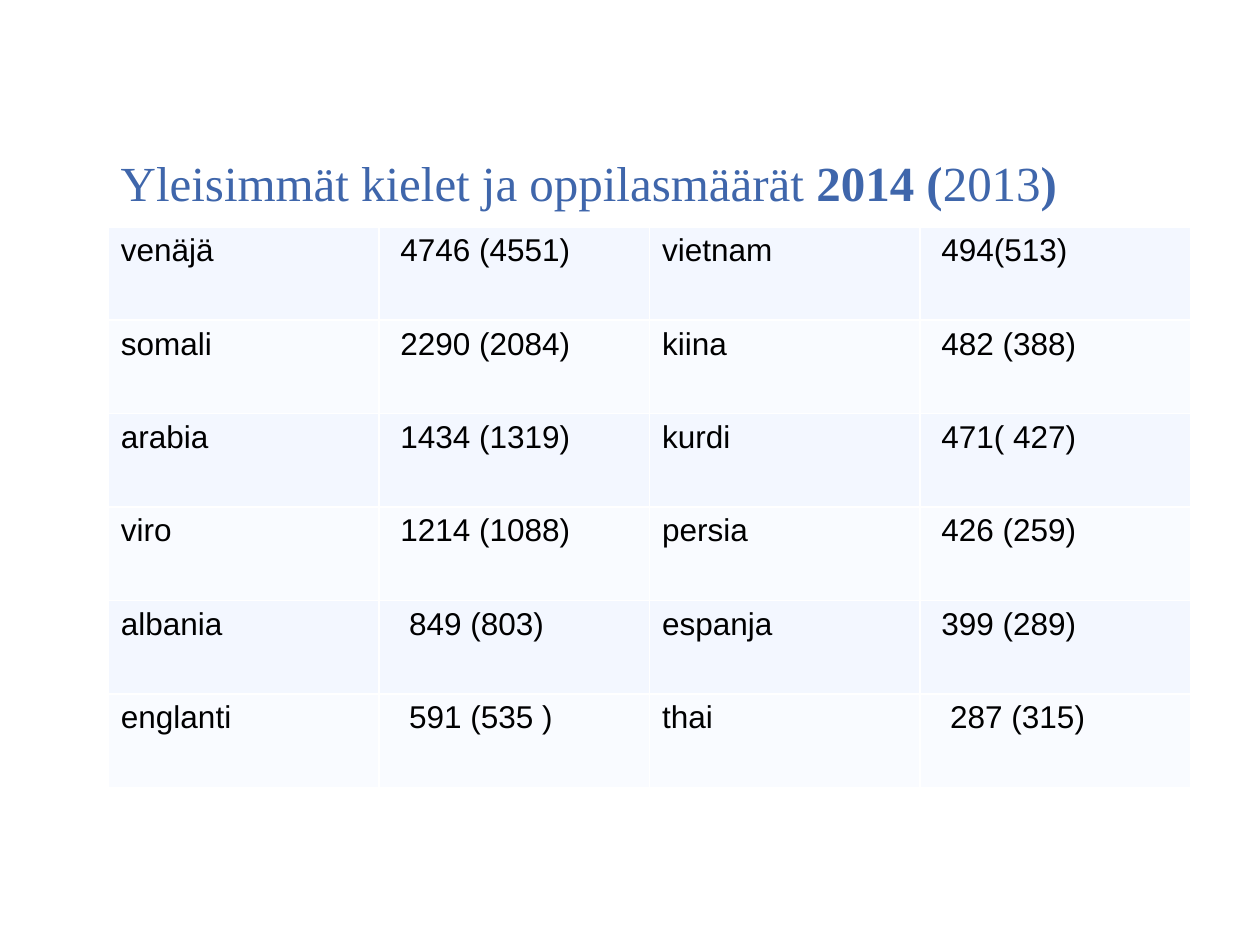
from dataclasses import dataclass

import lxml.etree
import pptx
import pptx.dml.color
import pptx.enum.text
import pptx.oxml.ns
import pptx.util

Inches = pptx.util.Inches
Pt = pptx.util.Pt
Color = pptx.dml.color.RGBColor.from_string


@dataclass(frozen=True)
class Theme:
    """Colours, fonts and type sizes of the slide."""
    title: str = "3F66AB"
    text: str = "000000"
    rule: str = "FFFFFF"
    bands: tuple = ("F3F7FF", "F9FBFF")
    serif: str = "Times New Roman"
    sans: str = "Arial"
    large: int = 28
    body: int = 18


THEME = Theme()
TITLE = [("Yleisimmät kielet ja oppilasmäärät ", False), ("2014 (", True),
         ("2013", False), (")", True)]
ROWS = [
    [("venäjä", 0), ("4746 (4551)", 1), ("vietnam", 0), ("494(513)", 1)],
    [("somali", 0), ("2290 (2084)", 1), ("kiina", 0), ("482 (388)", 1)],
    [("arabia", 0), ("1434 (1319)", 1), ("kurdi", 0), ("471( 427)", 1)],
    [("viro", 0), ("1214 (1088)", 1), ("persia", 0), ("426 (259)", 1)],
    [("albania", 0), ("849 (803)", 2), ("espanja", 0), ("399 (289)", 1)],
    [("englanti", 0), ("591 (535 )", 2), ("thai", 0), ("287 (315)", 2)],
]


def style(font, name, size, color, bold=False):
    """Set the face, size, colour and weight of a font."""
    font.name, font.size, font.bold = name, Pt(size), bold
    font.color.rgb = Color(color)


def add_title(slide, box):
    """Place the heading, with its mixed weights, in the box."""
    frame = slide.shapes.add_textbox(*box).text_frame
    frame.word_wrap = True
    frame.vertical_anchor = pptx.enum.text.MSO_ANCHOR.MIDDLE
    for text, bold in TITLE:
        run = frame.paragraphs[0].add_run()
        run.text = text
        style(run.font, THEME.serif, THEME.large, THEME.title, bold)


def add_rules(cell):
    """Draw a thin line on every side of a cell."""
    qn = pptx.oxml.ns.qn
    props = cell._tc.get_or_add_tcPr()
    for side in ("a:lnL", "a:lnR", "a:lnT", "a:lnB"):
        line = lxml.etree.SubElement(props, qn(side), w=str(Pt(1)))
        fill = lxml.etree.SubElement(line, qn("a:solidFill"))
        lxml.etree.SubElement(fill, qn("a:srgbClr"), val=THEME.rule)


def fill_cell(cell, text, level, color):
    """Write one cell, indented by its level, on a band colour."""
    add_rules(cell)
    cell.fill.solid()
    cell.fill.fore_color.rgb = Color(color)
    cell.margin_left = Inches(0.1 + 0.07 * level)
    cell.text_frame.text = text
    run = cell.text_frame.paragraphs[0].runs[0]
    style(run.font, THEME.sans, THEME.body, THEME.text)


def add_langs(slide, box):
    """Place the table of languages and pupil counts in the box."""
    table = slide.shapes.add_table(len(ROWS), len(ROWS[0]), *box).table
    table.first_row = table.horz_banding = False
    for i, row in enumerate(ROWS):
        for j, (text, level) in enumerate(row):
            fill_cell(table.cell(i, j), text, level, THEME.bands[i % 2])


def main():
    """Build and save the slide."""
    deck = pptx.Presentation()
    deck.slide_width, deck.slide_height = Inches(10), Inches(7.5)
    slide = deck.slides.add_slide(deck.slide_layouts[6])
    left, width = Inches(0.86), Inches(8.59)
    add_title(slide, (left, Inches(0.86), width, Inches(1.17)))
    add_langs(slide, (left, Inches(1.8), width, Inches(4.45)))
    deck.save("out.pptx")


if __name__ == "__main__":
    main()
